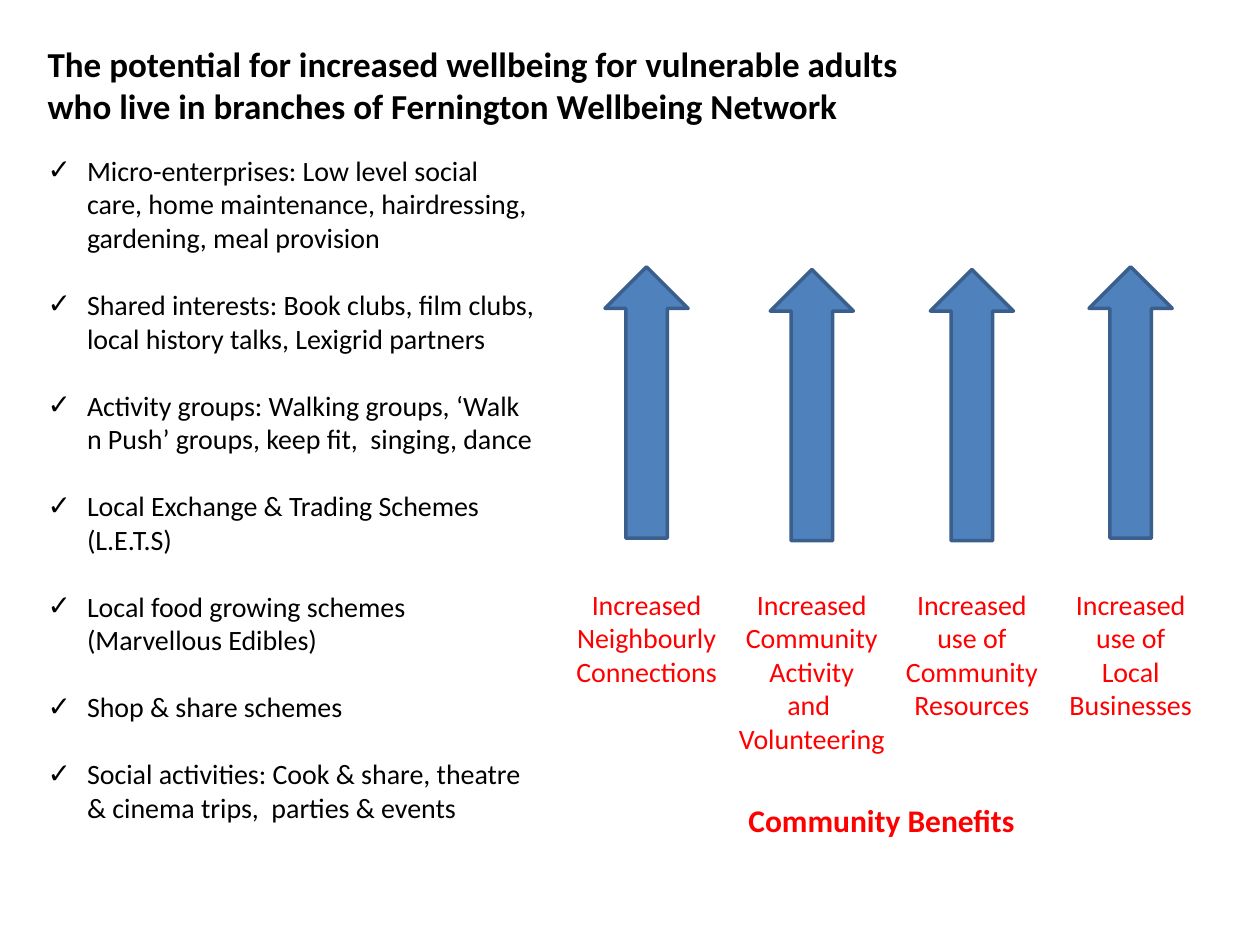
from lxml import etree
from pptx import Presentation
from pptx.dml.color import RGBColor
from pptx.enum.shapes import MSO_SHAPE
from pptx.enum.text import MSO_ANCHOR, MSO_AUTO_SIZE, PP_ALIGN
from pptx.oxml.ns import qn
from pptx.util import Pt

LEFT, CENTER = PP_ALIGN.LEFT, PP_ALIGN.CENTER
TOP, FIXED = MSO_ANCHOR.TOP, MSO_AUTO_SIZE.NONE
ARROW = MSO_SHAPE.UP_ARROW

FONT = "Calibri"
COLOR = {"text": "000000", "gain": "FF0000", "fill": "4F81BD", "line": "3A5F8C"}

# Content
TITLE = ("The potential for increased wellbeing for vulnerable adults\n"
         "who live in branches of Fernington Wellbeing Network")
IDEAS = [
    "Micro-enterprises: Low level social care, home maintenance, "
    "hairdressing, gardening, meal provision",
    "Shared interests: Book clubs, film clubs, local history talks, Lexigrid partners",
    "Activity groups: Walking groups, ‘Walk n Push’ groups, keep fit,  singing, dance",
    "Local Exchange & Trading Schemes (L.E.T.S)",
    "Local food growing schemes  (Marvellous Edibles)",
    "Shop & share schemes",
    "Social activities: Cook & share, theatre & cinema trips,  parties & events",
]
# Label, centre, label width, label height, arrow top
GAINS = [
    ("Increased Neighbourly Connections", 369.5, 98.6, 65.5, 152.5),
    ("Increased Community\nActivity\nand \nVolunteering", 463.9, 105.8, 104.4, 154),
    ("Increased use of Community\nResources", 555.4, 95.8, 85, 154),
    ("Increased use of Local Businesses", 646.1, 85.7, 85, 152.5),
]
TOTAL = "Community Benefits"

LABEL_TOP = 332
ARROW_W, ARROW_H = 47.5, 155
INDENT, GAP = 22.5, 19.1


def rgb(name):
    return RGBColor.from_string(COLOR[name])


def place(shape, x, y, w, h):
    shape.left, shape.top, shape.width, shape.height = Pt(x), Pt(y), Pt(w), Pt(h)


def write(shape, text, size, color, align, bold=False):
    frame = shape.text_frame
    frame.text = text
    frame.word_wrap = True
    frame.auto_size = FIXED
    frame.vertical_anchor = TOP
    for para in frame.paragraphs:
        para.alignment = align
        para.space_before = Pt(0)
        for run in para.runs:
            font = run.font
            font.name, font.size, font.bold = FONT, Pt(size), bold
            font.color.rgb = rgb(color)


def tick(para):
    props = para._p.get_or_add_pPr()
    props.set("marL", str(Pt(INDENT)))
    props.set("indent", str(-Pt(INDENT)))
    etree.SubElement(props, qn("a:buFont")).set("typeface", FONT)
    etree.SubElement(props, qn("a:buChar")).set("char", "✓")


deck = Presentation()
deck.slide_width, deck.slide_height = Pt(720), Pt(540)
slide = deck.slides.add_slide(deck.slide_layouts[1])
shapes = slide.shapes

# Title
place(shapes.title, 20, 20.5, 680, 55.5)
write(shapes.title, TITLE, 20, "text", LEFT, True)

# Ticked list
body = slide.placeholders[1]
place(body, 20, 84, 294, 436)
write(body, "\n".join(IDEAS), 16, "text", LEFT)
for para in body.text_frame.paragraphs:
    para.space_after = Pt(GAP)
    tick(para)

# Arrows with their labels
for text, mid, wide, high, top in GAINS:
    arrow = shapes.add_shape(ARROW, Pt(mid - ARROW_W / 2), Pt(top),
                             Pt(ARROW_W), Pt(ARROW_H))
    arrow.shadow.inherit = False
    arrow.fill.solid()
    arrow.fill.fore_color.rgb = rgb("fill")
    arrow.line.color.rgb = rgb("line")
    arrow.line.width = Pt(2)
    label = shapes.add_textbox(Pt(mid - wide / 2), Pt(LABEL_TOP), Pt(wide), Pt(high))
    write(label, text, 16, "gain", CENTER)

# Summary
total = shapes.add_textbox(Pt(346), Pt(454), Pt(315.5), Pt(29))
write(total, TOTAL, 18, "gain", CENTER, True)

deck.save("out.pptx")
